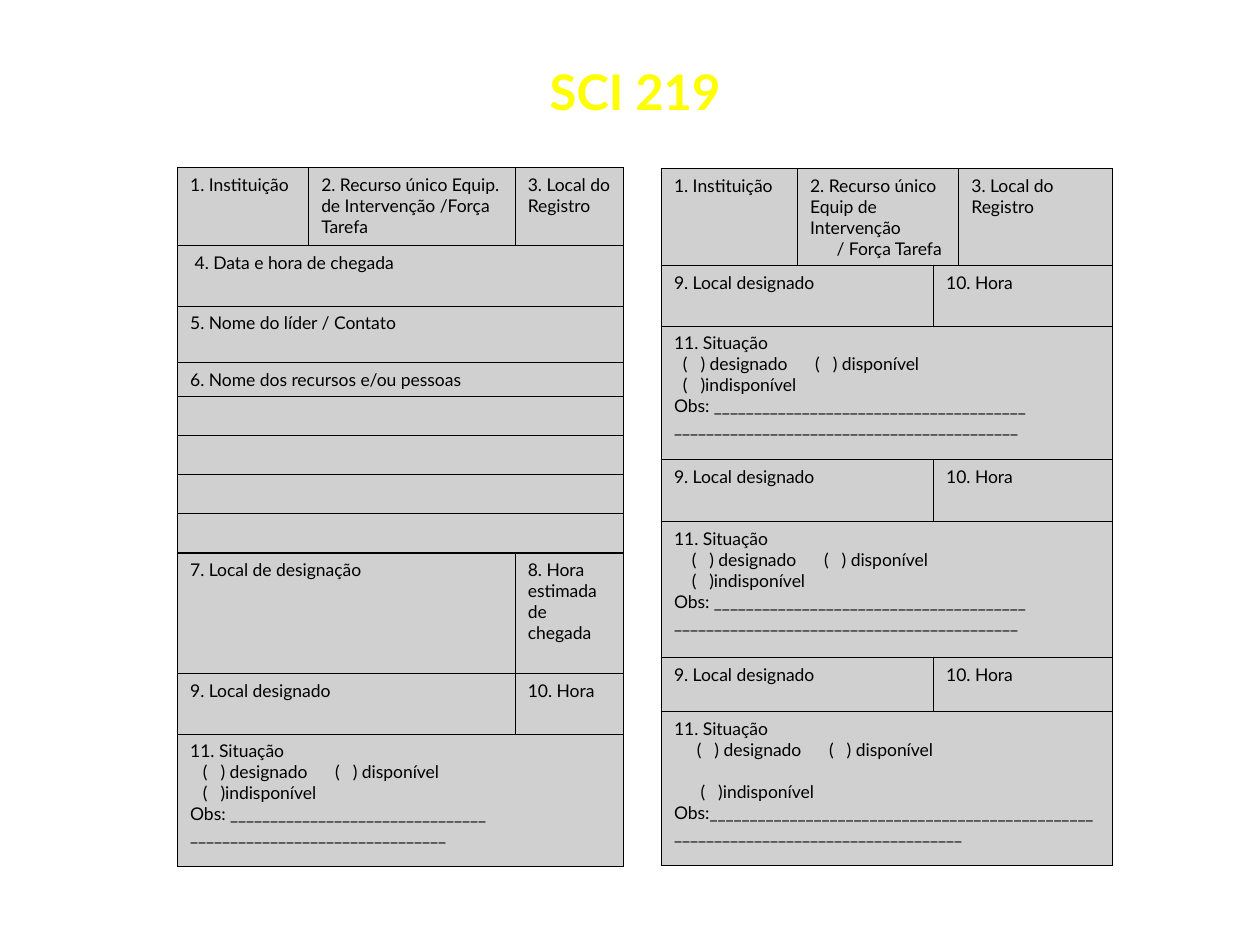
from dataclasses import dataclass

from lxml.etree import SubElement
from pptx import Presentation
from pptx.dml.color import RGBColor
from pptx.enum.text import MSO_ANCHOR, PP_ALIGN as Align
from pptx.oxml.ns import qn
from pptx.util import Inches, Pt


@dataclass(frozen=True)
class Theme:
    font: str = "Lato"
    title_size: float = 28
    body_size: float = 10
    title: str = "FFFF00"
    text: str = "000000"
    cell: str = "D0D0D0"
    border: str = "000000"
    border_width: float = 0.75


THEME = Theme()


@dataclass(frozen=True)
class Line:
    text: str
    tabs: tuple[float, ...] = ()
    space_before: float = 0


@dataclass(frozen=True)
class Field:
    """One form field: its lines and the number of columns it covers."""
    lines: tuple[Line, ...] = ()
    columns: int = 1
    justified: bool = False


@dataclass(frozen=True)
class Form:
    left: float
    top: float
    columns: tuple[float, ...]
    heights: tuple[float, ...]
    rows: tuple[tuple[Field, ...], ...]


def field(text: str, columns: int = 1, justified: bool = False) -> Field:
    return Field((Line(text),), columns, justified)


def place_and_time(time_columns: int) -> tuple[Field, Field]:
    return (field("9. Local designado", 2),
            field("10. Hora", time_columns, True))


def situation(columns: int, offset: float, notes: tuple[str, ...],
              last_offset: float | None = None, gap: float = 0,
              justified: bool = False) -> tuple[Field]:
    """Status options start at offset; tab stops leave room for the marks."""
    mark, step = 0.14, 1.05
    last = offset if last_offset is None else last_offset
    options = (
        Line("11. Situação"),
        Line("\t(\t) designado\t(\t) disponível",
             (offset, offset + mark, offset + step, offset + step + mark)),
        Line("\t(\t)indisponível", (last, last + mark), gap),
    )
    return (Field(options + tuple(map(Line, notes)), columns, justified),)


RIGHT_NOTES = ("Obs: " + "_" * 39, "_" * 43)

ARRIVAL_FORM = Form(
    1.41, 1.33, (1.04, 1.64, 0.86),
    (0.62, 0.48, 0.45, 0.27, *[0.31] * 4, 0.96, 0.48, 1.05),
    (
        (field("1. Instituição"),
         field("2. Recurso único Equip. de Intervenção /Força Tarefa"),
         field("3. Local do Registro")),
        (field(" 4. Data e hora de chegada", 3),),
        (field("5. Nome do líder / Contato", 3),),
        (field("6. Nome dos recursos e/ou pessoas", 3, True),),
        *[(Field(columns=3),)] * 4,
        (field("7. Local de designação", 2),
         field("8. Hora estimada de chegada")),
        place_and_time(1),
        situation(3, 0.1, ("Obs: " + "_" * 32, "_" * 32)),
    ),
)

ASSIGNMENT_FORM = Form(
    5.25, 1.34, (1.08, 1.08, 0.2, 1.22),
    (0.77, 0.48, 1.06, 0.49, 1.08, 0.43, 1.22),
    (
        (field("1. Instituição", justified=True),
         Field((Line("2. Recurso único"), Line("Equip de Intervenção"),
                Line("\t/ Força Tarefa", (0.21,))), 2),
         field("3. Local do Registro")),
        place_and_time(2),
        situation(4, 0.07, RIGHT_NOTES, justified=True),
        place_and_time(2),
        situation(4, 0.14, RIGHT_NOTES),
        place_and_time(2),
        situation(4, 0.18, ("Obs:" + "_" * 84,), 0.21, 12, True),
    ),
)


def add_run(paragraph, text: str, size: float, color: str,
            bold: bool = False) -> None:
    run = paragraph.add_run()
    run.text = text
    run.font.name = THEME.font
    run.font.size = Pt(size)
    run.font.bold = bold
    run.font.color.rgb = RGBColor.from_string(color)


def add_tab_stops(paragraph, stops: tuple[float, ...]) -> None:
    tab_list = SubElement(paragraph._p.get_or_add_pPr(), qn("a:tabLst"))
    for stop in stops:
        SubElement(tab_list, qn("a:tab"), pos=str(Inches(stop)), algn="l")


def style_cell(cell) -> None:
    properties = cell._tc.get_or_add_tcPr()
    for side in ("lnL", "lnR", "lnT", "lnB"):
        border = SubElement(properties, qn(f"a:{side}"),
                            w=str(Pt(THEME.border_width)))
        fill = SubElement(border, qn("a:solidFill"))
        SubElement(fill, qn("a:srgbClr"), val=THEME.border)
    cell.fill.solid()
    cell.fill.fore_color.rgb = RGBColor.from_string(THEME.cell)
    # Empty cells need a small end mark so that their rows stay low.
    SubElement(cell.text_frame.paragraphs[0]._p, qn("a:endParaRPr"),
               sz=str(int(THEME.body_size * 100)))


def write_field(cell, content: Field) -> None:
    frame = cell.text_frame
    for index, line in enumerate(content.lines):
        paragraph = frame.add_paragraph() if index else frame.paragraphs[0]
        paragraph.alignment = Align.JUSTIFY if content.justified else Align.LEFT
        if line.space_before:
            paragraph.space_before = Pt(line.space_before)
        if line.tabs:
            add_tab_stops(paragraph, line.tabs)
        add_run(paragraph, line.text, THEME.body_size, THEME.text)


def add_form(slide, form: Form) -> None:
    table = slide.shapes.add_table(
        len(form.heights), len(form.columns), Inches(form.left),
        Inches(form.top), Inches(sum(form.columns)),
        Inches(sum(form.heights))).table
    table.first_row = table.horz_banding = False
    for column, width in zip(table.columns, form.columns):
        column.width = Inches(width)
    for row, height in zip(table.rows, form.heights):
        row.height = Inches(height)
    for cell in table.iter_cells():
        style_cell(cell)
    for row_index, fields in enumerate(form.rows):
        start = 0
        for content in fields:
            cell = table.cell(row_index, start)
            start += content.columns
            if content.columns > 1:
                cell.merge(table.cell(row_index, start - 1))
            write_field(cell, content)


def add_title(slide, text: str) -> None:
    box = slide.shapes.add_textbox(Inches(1.93), Inches(0.44),
                                   Inches(6.22), Inches(0.57))
    frame = box.text_frame
    frame.word_wrap = True
    frame.vertical_anchor = MSO_ANCHOR.MIDDLE
    paragraph = frame.paragraphs[0]
    paragraph.alignment = Align.CENTER
    add_run(paragraph, text, THEME.title_size, THEME.title, bold=True)


def main() -> None:
    presentation = Presentation()
    presentation.slide_width = Inches(10)
    presentation.slide_height = Inches(7.5)
    slide = presentation.slides.add_slide(presentation.slide_layouts[6])
    add_title(slide, "SCI 219")
    for form in (ARRIVAL_FORM, ASSIGNMENT_FORM):
        add_form(slide, form)
    presentation.save("out.pptx")


if __name__ == "__main__":
    main()
